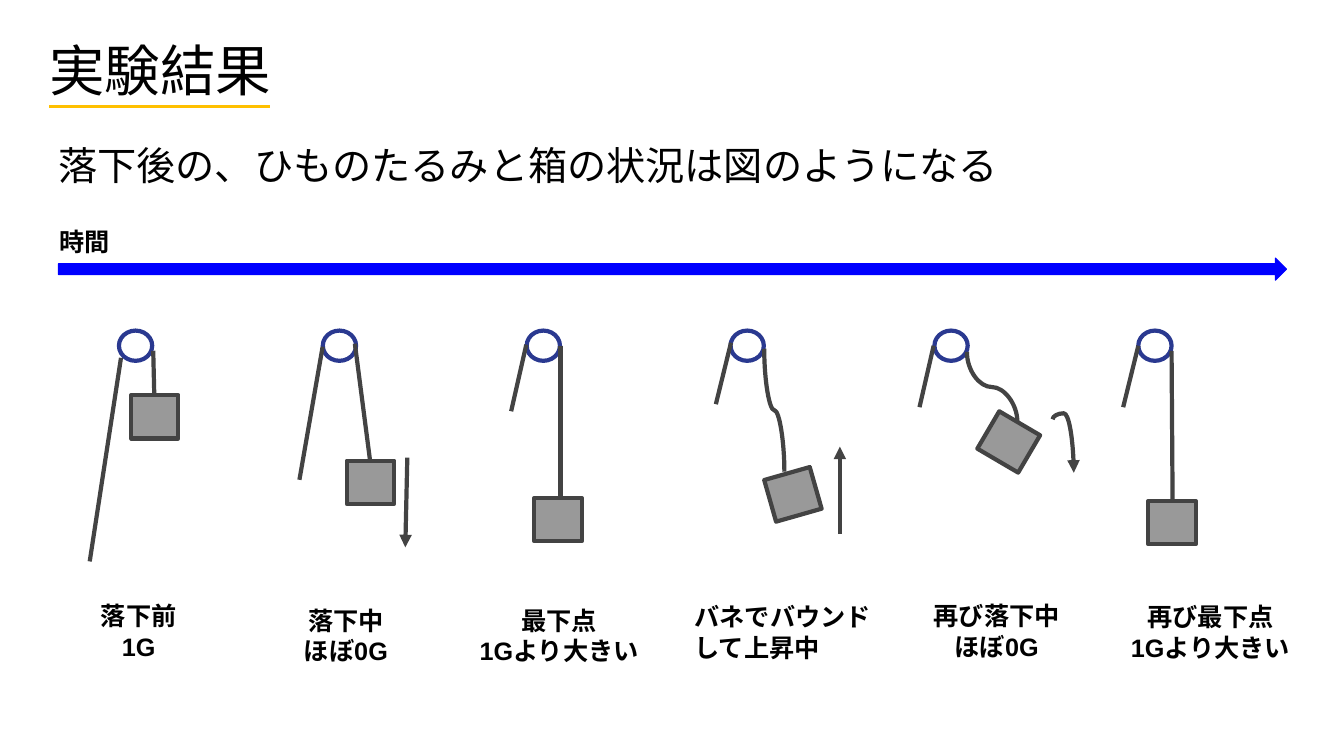
from dataclasses import dataclass

from lxml import etree
from pptx import Presentation
from pptx.dml.color import RGBColor
from pptx.enum.shapes import MSO_CONNECTOR, MSO_SHAPE
from pptx.enum.text import MSO_ANCHOR, PP_ALIGN
from pptx.oxml.ns import qn
from pptx.util import Cm, Pt

STRAIGHT = MSO_CONNECTOR.STRAIGHT
RECTANGLE, OVAL, RIGHT_ARROW = MSO_SHAPE.RECTANGLE, MSO_SHAPE.OVAL, MSO_SHAPE.RIGHT_ARROW
TOP, MIDDLE = MSO_ANCHOR.TOP, MSO_ANCHOR.MIDDLE
LEFT, CENTER = PP_ALIGN.LEFT, PP_ALIGN.CENTER


@dataclass(frozen=True)
class Theme:
    """Colours, fonts and type sizes of the slide."""
    ink: str = "000000"
    accent: str = "FFC000"
    time: str = "0000FF"
    pulley: str = "2A3990"
    pulley_fill: str = "FFFFFF"
    string: str = "434343"
    weight: str = "999999"
    latin: str = "Arial"
    japanese: str = "Noto Sans CJK JP"
    title_size: float = 39.6
    body_size: float = 28
    label_size: float = 18
    stroke: float = 3


@dataclass(frozen=True)
class Stage:
    """One moment of the fall, with positions in inches."""
    held: list
    hanging: list
    weight: tuple
    caption: list
    caption_box: tuple
    motion: tuple = ()
    align: PP_ALIGN = CENTER


THEME = Theme()
PULLEY_LEFT, PULLEY_STEP, PULLEY_TOP = 1.18, 2.022, 3.28
PULLEY_SIZE = (0.33, 0.3)
WEIGHT_SIZE = (0.47, 0.43)

STAGES = [
    Stage([(1.2, 3.55), (0.89, 5.57)], [(1.52, 3.48), (1.53, 3.91)],
          (1.3, 3.92, 0), ["落下前", "1G"], (0.78, 5.86, 1.19, 0.81)),
    Stage([(3.2, 3.44), (2.97, 4.76)], [(3.52, 3.41), (3.69, 4.72)],
          (3.44, 4.57, 0), ["落下中　", "ほぼ0G　"], (2.91, 5.9, 1.29, 0.81),
          ((4.04, 4.54), (4.02, 5.43))),
    Stage([(5.22, 3.42), (5.07, 4.08)], [(5.56, 3.43), (5.56, 4.92)],
          (5.3, 4.94, 0), ["最下点", "1Gより大きい"], (4.5, 5.9, 2.09, 1.11)),
    Stage([(7.25, 3.4), (7.1, 4.01)],
          [(7.58, 3.46), (7.58, 3.77), (7.63, 4.07), (7.68, 4.07),
           (7.73, 4.07), (7.78, 4.38), (7.78, 4.68)],
          (7.63, 4.69, 344.1), ["バネでバウンド", "して上昇中"], (6.79, 5.87, 2.17, 0.81),
          ((8.33, 5.3), (8.33, 4.43)), LEFT),
    Stage([(9.26, 3.43), (9.12, 4.04)],
          [(9.59, 3.49), (9.59, 3.67), (9.71, 3.84), (9.84, 3.84),
           (9.96, 3.84), (10.09, 4.01), (10.09, 4.18)],
          (9.77, 4.17, 30.4), ["再び落下中", "ほぼ0G"], (9.11, 5.86, 1.55, 1.11),
          ((10.44, 4.16), (10.44, 4.13), (10.49, 4.1), (10.55, 4.1),
           (10.6, 4.1), (10.65, 4.4), (10.65, 4.69))),
    Stage([(11.29, 3.43), (11.14, 4.04)], [(11.62, 3.48), (11.63, 4.97)],
          (11.39, 4.97, 0), ["再び最下点", "1Gより大きい"], (10.96, 5.87, 2.09, 1.11)),
]


def lengths(values):
    """Turn inches into slide lengths."""
    return [Cm(value * 2.54) for value in values]


def set_line(line, color, width):
    """Set the colour and width of an outline."""
    line.color.rgb = RGBColor.from_string(color)
    line.width = Pt(width)


def add_block(page, kind, place, fill, color, width=THEME.stroke, angle=0):
    """Add a filled preset shape."""
    block = page.shapes.add_shape(kind, *lengths(place))
    block.shadow.inherit = False
    block.fill.solid()
    block.fill.fore_color.rgb = RGBColor.from_string(fill)
    set_line(block.line, color, width)
    block.rotation = angle
    return block


def add_straight(page, points, color, width):
    """Add a straight line between two points."""
    start, end = points
    line = page.shapes.add_connector(STRAIGHT, *lengths(start + end))
    set_line(line.line, color, width)
    etree.SubElement(line._element.spPr, qn("a:effectLst"))
    return line


def add_curve(page, points, color, width):
    """Add an open Bezier curve through a start and triples of control points."""
    start, *rest = [lengths(point) for point in points]
    builder = page.shapes.build_freeform(*start, scale=1.0)
    builder.add_line_segments(rest, close=False)
    curve = builder.convert_to_shape()
    outline = next(curve._element.iter(qn("a:path")))
    segments = outline.findall(qn("a:lnTo"))
    for first in range(0, len(segments), 3):
        bezier = etree.SubElement(outline, qn("a:cubicBezTo"))
        for segment in segments[first:first + 3]:
            bezier.append(segment[0])
            outline.remove(segment)
    curve.fill.background()
    curve.shadow.inherit = False
    set_line(curve.line, color, width)
    return curve


def add_stroke(page, points, color=THEME.string, width=THEME.stroke, arrow=False):
    """Add a straight or curved line, with an arrowhead if asked."""
    draw = add_straight if len(points) == 2 else add_curve
    stroke = draw(page, points, color, width)
    if arrow:
        outline = stroke._element.spPr.find(qn("a:ln"))
        etree.SubElement(outline, qn("a:tailEnd"), type="triangle")


def add_text(page, place, lines, size, bold=False, align=LEFT, anchor=TOP,
             inset=0.1, spacing=1.0, before=0):
    """Add a text box with one paragraph for each line."""
    box = page.shapes.add_textbox(*lengths(place))
    frame = box.text_frame
    frame.word_wrap = True
    frame.vertical_anchor = anchor
    frame.margin_top, frame.margin_bottom = lengths((inset, inset))
    frame.margin_left, frame.margin_right = lengths((0.1, 0.1))
    frame.text = "\n".join(lines)
    for para in frame.paragraphs:
        para.alignment = align
        para.line_spacing = spacing
        para.space_before = Pt(before)
        for span in para.runs:
            span.font.size = Pt(size)
            span.font.bold = bold
            span.font.name = THEME.latin if bold else THEME.japanese
            span.font.color.rgb = RGBColor.from_string(THEME.ink)
            etree.SubElement(span.font._element, qn("a:ea"), typeface=THEME.japanese)


def add_heading(page):
    """Add the title, its underline and the lead sentence."""
    add_text(page, (0.39, 0.39, 5.4, 0.67), ["実験結果"], THEME.title_size,
             anchor=MIDDLE, inset=0.05, spacing=0.9)
    add_stroke(page, [(0.49, 1.06), (2.68, 1.06)], THEME.accent, 2.25)
    add_text(page, (0.48, 1.41, 11.45, 0.54),
             ["落下後の、ひものたるみと箱の状況は図のようになる"],
             THEME.body_size, inset=0.05, spacing=0.9, before=10)


def add_time_axis(page):
    """Add the time arrow and its label."""
    add_block(page, RIGHT_ARROW, (0.58, 2.56, 12.18, 0.22), THEME.time, THEME.time, 0.75)
    add_text(page, (0.49, 2.14, 0.8, 0.5), ["時間"], THEME.label_size,
             bold=True, anchor=MIDDLE)


def add_stage(page, index, stage):
    """Add the pulley, strings, weight, motion arrow and caption of a stage."""
    left = PULLEY_LEFT + index * PULLEY_STEP
    add_block(page, OVAL, (left, PULLEY_TOP, *PULLEY_SIZE), THEME.pulley_fill, THEME.pulley)
    add_stroke(page, stage.held)
    add_stroke(page, stage.hanging)
    x, y, angle = stage.weight
    add_block(page, RECTANGLE, (x, y, *WEIGHT_SIZE), THEME.weight, THEME.string, angle=angle)
    if stage.motion:
        add_stroke(page, stage.motion, arrow=True)
    add_text(page, stage.caption_box, stage.caption, THEME.label_size,
             bold=True, align=stage.align)


def main():
    """Build the slide and save the deck."""
    deck = Presentation()
    deck.slide_width, deck.slide_height = lengths((13.33, 7.5))
    page = deck.slides.add_slide(deck.slide_layouts[6])
    add_heading(page)
    add_time_axis(page)
    for index, stage in enumerate(STAGES):
        add_stage(page, index, stage)
    deck.save("out.pptx")


if __name__ == "__main__":
    main()
